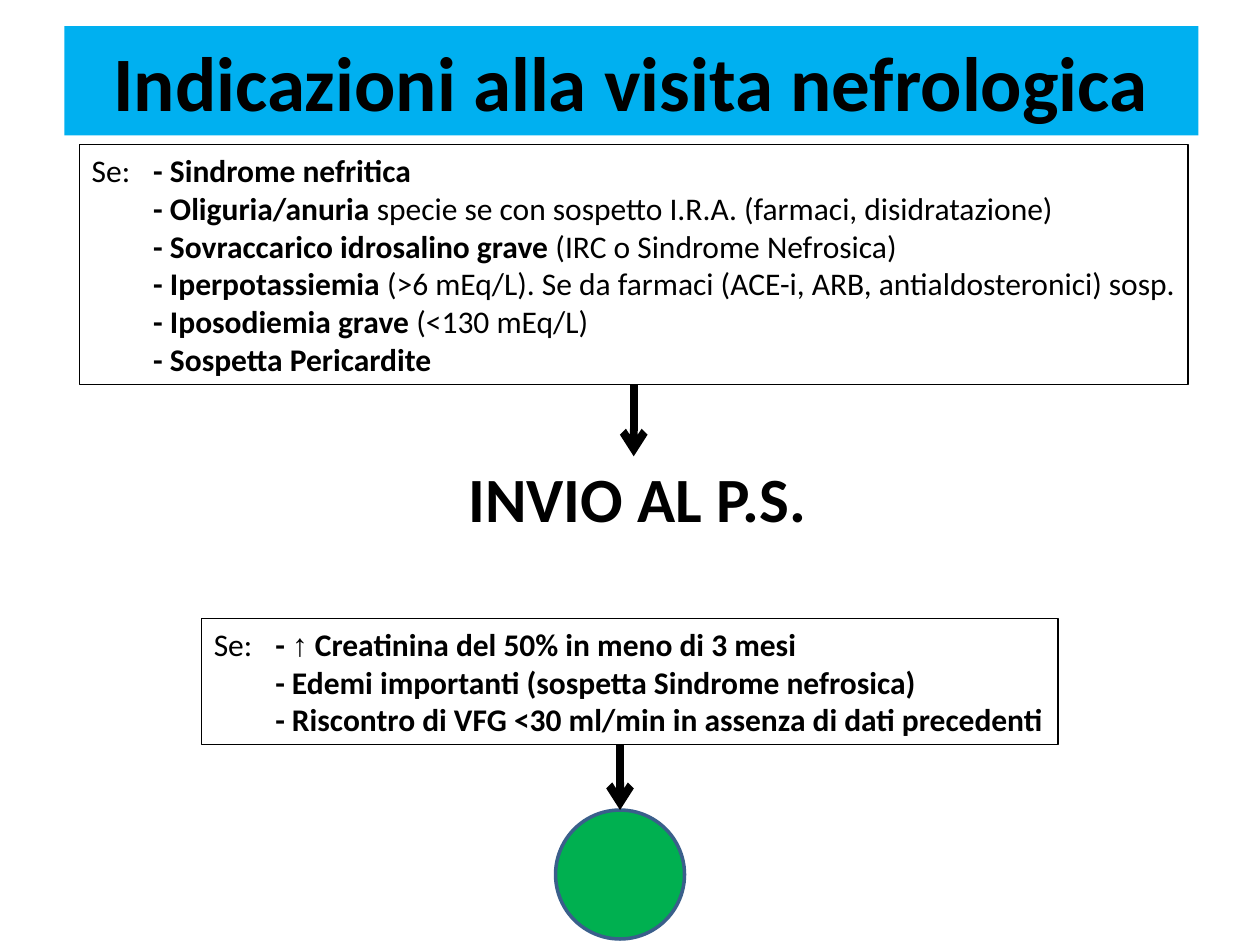
from lxml.etree import SubElement
from pptx import Presentation
from pptx.dml.color import RGBColor
from pptx.enum.shapes import MSO_CONNECTOR, MSO_SHAPE
from pptx.enum.text import MSO_ANCHOR, PP_ALIGN
from pptx.oxml.ns import qn
from pptx.util import Cm, Pt

COLORS = {
    "text": "000000",
    "title": "00B0F0",
    "circle": "00B050",
    "circle_line": "3A5F8B",
}

# Each line is a list of (text, bold) or (text, bold, font) spans.
EMERGENCY_LINES = [
    [("Se:\t", False), ("- Sindrome nefritica", True)],
    [("\t- Oliguria/anuria ", True),
     ("specie se con sospetto I.R.A. (farmaci, disidratazione)", False)],
    [("\t- Sovraccarico idrosalino grave", True), (" (IRC o Sindrome Nefrosica)", False)],
    [("\t- Iperpotassiemia", True),
     (" (>6 mEq/L). Se da farmaci (ACE-i, ARB, antialdosteronici) sosp.", False)],
    [("\t- Iposodiemia grave", True), (" (<130 mEq/L)", False)],
    [("\t- Sospetta Pericardite", True)],
]
VISIT_LINES = [
    [("Se:\t", False), ("- ", True), ("↑", True, "Arial"),
     (" Creatinina del 50% in meno di 3 mesi", True)],
    [("\t- Edemi importanti (sospetta Sindrome nefrosica)", True)],
    [("\t- Riscontro di VFG <30 ml/min in assenza di dati precedenti", True)],
]


def color(name):
    return RGBColor.from_string(COLORS[name])


def add_span(para, text, bold=False, font="Calibri", size=18):
    span = para.add_run()
    span.text = text
    span.font.name = font
    span.font.size = Pt(size)
    span.font.bold = bold
    span.font.color.rgb = color("text")


def add_tab_stop(para, position):
    tabs = SubElement(para._p.get_or_add_pPr(), qn("a:tabLst"))
    SubElement(tabs, qn("a:tab"), pos=str(position), algn="l")


def add_text(page, lines, left, top, width, height, size=18, fill=None,
             outlined=False, align=PP_ALIGN.LEFT, anchor=MSO_ANCHOR.TOP, tab=None):
    box = page.shapes.add_textbox(Cm(left), Cm(top), Cm(width), Cm(height))
    if fill:
        box.fill.solid()
        box.fill.fore_color.rgb = color(fill)
    if outlined:
        box.line.color.rgb = color("text")
        box.line.width = Pt(0.75)
    frame = box.text_frame
    frame.word_wrap = False
    frame.vertical_anchor = anchor
    for index, spans in enumerate(lines):
        para = frame.add_paragraph() if index else frame.paragraphs[0]
        para.alignment = align
        if tab:
            add_tab_stop(para, Cm(tab))
        for span in spans:
            add_span(para, *span, size=size)
    return box


def add_circle(page, left, top, diameter):
    circle = page.shapes.add_shape(
        MSO_SHAPE.OVAL, Cm(left), Cm(top), Cm(diameter), Cm(diameter))
    circle.shadow.inherit = False
    circle.fill.solid()
    circle.fill.fore_color.rgb = color("circle")
    circle.line.color.rgb = color("circle_line")
    circle.line.width = Pt(2)
    return circle


def add_down_arrow(page, center, top, bottom):
    """Draw a vertical arrow; all positions are lengths."""
    arrow = page.shapes.add_connector(MSO_CONNECTOR.STRAIGHT, center, top, center, bottom)
    arrow.line.color.rgb = color("text")
    arrow.line.width = Pt(4.5)
    SubElement(arrow.line._get_or_add_ln(), qn("a:tailEnd"), type="arrow")
    SubElement(arrow._element.spPr, qn("a:effectLst"))
    return arrow


def main():
    deck = Presentation()
    deck.slide_width, deck.slide_height = Cm(25.4), Cm(19.05)
    page = deck.slides.add_slide(deck.slide_layouts[6])

    add_text(page, [[("Indicazioni alla visita nefrologica", True)]], 1.3, 0.53, 22.86, 2.2,
             size=44, fill="title", align=PP_ALIGN.CENTER, anchor=MSO_ANCHOR.MIDDLE)
    emergency = add_text(page, EMERGENCY_LINES, 1.6, 2.92, 22.35, 4.83, outlined=True, tab=1.24)
    add_text(page, [[("INVIO AL P.S.", True)]], 8.85, 9.14, 8, 1.78,
             size=36, align=PP_ALIGN.CENTER)
    add_text(page, VISIT_LINES, 4.06, 12.47, 17.27, 2.54, outlined=True, tab=1.24)
    circle = add_circle(page, 11.2, 16.33, 2.6)

    emergency_arrow = add_down_arrow(
        page, emergency.left + emergency.width // 2, Cm(7.75), Cm(9.2))
    emergency_arrow.begin_connect(emergency, 2)
    visit_arrow = add_down_arrow(page, circle.left + circle.width // 2, Cm(15.01), circle.top)
    visit_arrow.end_connect(circle, 0)

    deck.save("out.pptx")


if __name__ == "__main__":
    main()
